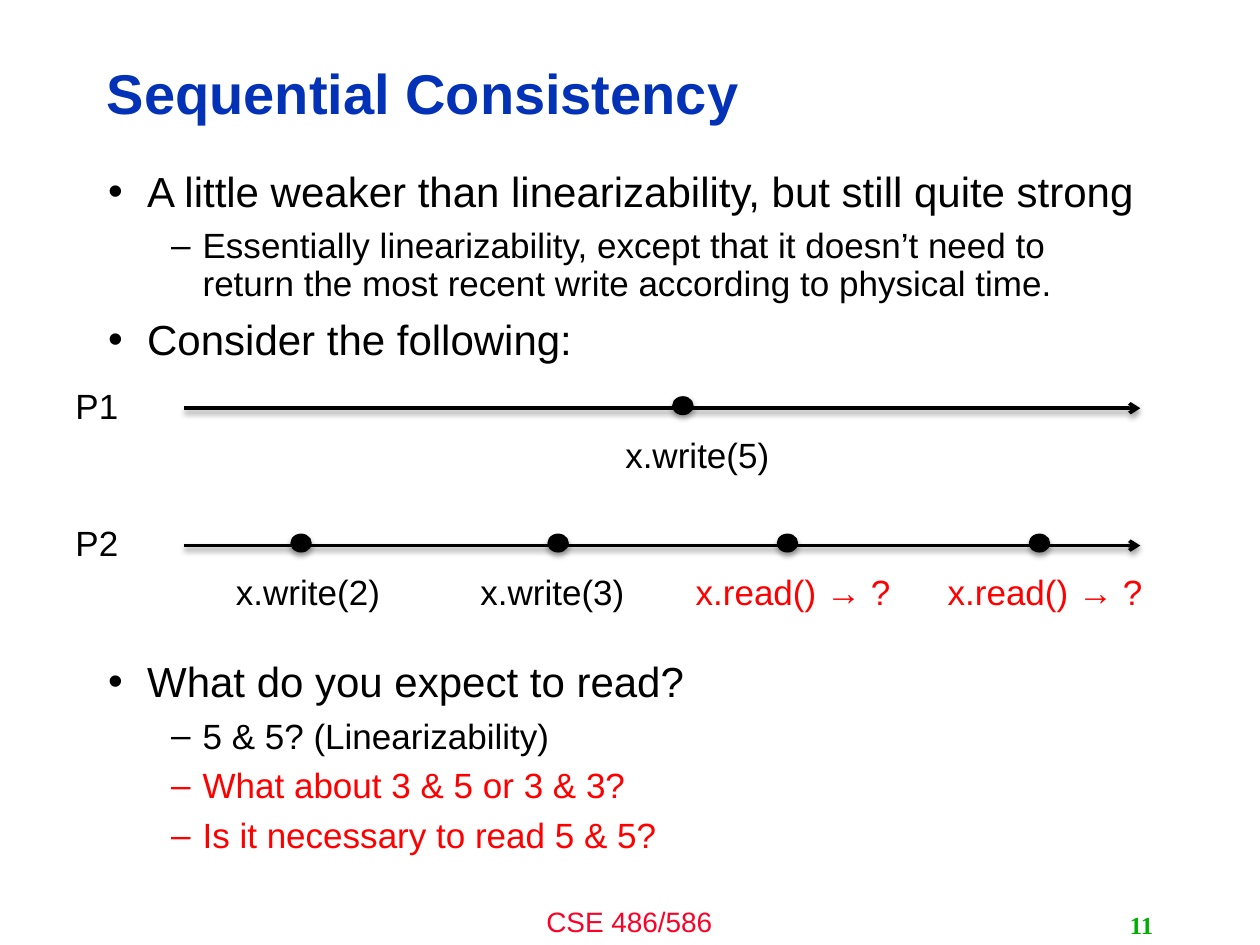
from lxml import etree
from pptx import Presentation
from pptx.dml.color import RGBColor
from pptx.enum.shapes import MSO_CONNECTOR, MSO_SHAPE
from pptx.enum.text import MSO_ANCHOR, PP_ALIGN
from pptx.oxml import parse_xml
from pptx.oxml.ns import nsdecls, qn
from pptx.util import Inches, Pt

LEFT, CENTER, RIGHT = PP_ALIGN.LEFT, PP_ALIGN.CENTER, PP_ALIGN.RIGHT
TOP, MIDDLE = MSO_ANCHOR.TOP, MSO_ANCHOR.MIDDLE
OVAL, STRAIGHT = MSO_SHAPE.OVAL, MSO_CONNECTOR.STRAIGHT

BLACK = RGBColor(0x00, 0x00, 0x00)
RED = RGBColor(0xFF, 0x00, 0x00)
BLUE = RGBColor(0x03, 0x32, 0xB7)
GREEN = RGBColor(0x00, 0xAE, 0x00)
PINK = RGBColor(0xFC, 0x01, 0x28)

CELL = 0.1  # grid of 100 columns by 75 rows
# size, indent and hanging offset in inches, bullet sign
LEVELS = [(24, 0.31, -0.31, "•"), (20, 0.75, -0.25, "–")]


class Deck:
    def __init__(self, cols, rows, font):
        self.font = font
        self.file = Presentation()
        self.file.slide_width = self.unit(cols)
        self.file.slide_height = self.unit(rows)
        self.slide = self.file.slides.add_slide(self.file.slide_layouts[6])

    def unit(self, cells):
        return Inches(cells * CELL)

    def frame(self, area, anchor=TOP):
        box = self.slide.shapes.add_textbox(*map(self.unit, area))
        box.text_frame.word_wrap = True
        box.text_frame.vertical_anchor = anchor
        return box.text_frame

    def run(self, para, text, size, color, bold=False, font=None):
        run = para.add_run()
        run.text = text
        style = run.font
        style.name, style.size, style.bold = font or self.font, Pt(size), bold
        style.color.rgb = color

    def label(self, area, text, size=20, color=BLACK, align=LEFT,
              anchor=TOP, spacing=None, **style):
        para = self.frame(area, anchor).paragraphs[0]
        para.alignment = align
        para.line_spacing = spacing
        self.run(para, text, size, color, **style)

    def bullets(self, area, items):
        frame = self.frame(area)
        for i, (level, text, color) in enumerate(items):
            para = frame.add_paragraph() if i else frame.paragraphs[0]
            size, indent, hang, sign = LEVELS[level]
            para.level = level
            para.line_spacing = 0.9
            para.space_before = Pt(round(size * 0.345, 1))
            props = para._p.get_or_add_pPr()
            props.set("marL", str(Inches(indent)))
            props.set("indent", str(Inches(hang)))
            etree.SubElement(props, qn("a:buFont")).set("typeface", self.font)
            etree.SubElement(props, qn("a:buChar")).set("char", sign)
            self.run(para, text, size, color)

    def shade(self, shape, alpha, dist):
        """Add a soft black shadow straight below the shape."""
        shape._element.spPr.append(parse_xml(
            f'<a:effectLst {nsdecls("a")}><a:outerShdw blurRad="{Pt(3.1)}" '
            f'dist="{Pt(dist)}" dir="5400000" rotWithShape="0">'
            f'<a:srgbClr val="000000"><a:alpha val="{alpha * 1000}"/>'
            '</a:srgbClr></a:outerShdw></a:effectLst>'))

    def arrow(self, start, end, row):
        x1, x2, y = map(self.unit, (start, end, row))
        line = self.slide.shapes.add_connector(STRAIGHT, x1, y, x2, y)
        line.line.color.rgb = BLACK
        line.line.width = Pt(2)
        tail = etree.SubElement(line.line._get_or_add_ln(), qn("a:tailEnd"))
        tail.set("type", "arrow")
        self.shade(line, 38, 1.6)

    def dot(self, col, row):
        area = (col - 0.8, row - 0.9, 1.6, 1.4)
        dot = self.slide.shapes.add_shape(OVAL, *map(self.unit, area))
        dot.fill.solid()
        dot.fill.fore_color.rgb = BLACK
        dot.line.color.rgb = BLACK
        dot.line.width = Pt(0.75)
        self.shade(dot, 35, 1.8)

    def process(self, name, row, events):
        """Draw a timeline; events are (dot column, label column, text, color)."""
        self.label((5, row - 2.4, 9.5, 4.4), name)
        self.arrow(14.6, 90.5, row)
        for col, mid, text, color in events:
            self.dot(col, row)
            self.label((mid - 17.15, row + 1.5, 34.3, 4.4), text,
                       color=color, align=CENTER)


def main():
    deck = Deck(100, 75, "Arial")
    deck.label((33.3, 71.3, 33.3, 3.7), "CSE 486/586", 16, PINK, CENTER)
    deck.label((7.5, 3.6, 79.8, 8.1), "Sequential Consistency", 32, BLUE,
               anchor=MIDDLE, spacing=0.9, bold=True)
    deck.bullets((7.6, 13.1, 84, 16.5), [
        (0, "A little weaker than linearizability, but still quite strong", BLACK),
        (1, "Essentially linearizability, except that it doesn’t need to "
            "return the most recent write according to physical time.", BLACK),
        (0, "Consider the following:", BLACK),
    ])
    deck.process("P1", 32.4, [(54.2, 55.35, "x.write(5)", BLACK)])
    deck.process("P2", 43.3, [
        (23.9, 24.45, "x.write(2)", BLACK),
        (44.3, 43.85, "x.write(3)", BLACK),
        (62.5, 62.95, "x.read() → ?", RED),
        (82.5, 82.95, "x.read() → ?", RED),
    ])
    deck.bullets((7.6, 52, 84, 19), [
        (0, "What do you expect to read?", BLACK),
        (1, "5 & 5? (Linearizability)", BLACK),
        (1, "What about 3 & 5 or 3 & 3?", RED),
        (1, "Is it necessary to read 5 & 5?", RED),
    ])
    deck.label((71.7, 71.8, 20.8, 3.2), "11", 14, GREEN, RIGHT, MIDDLE,
               bold=True, font="Times New Roman")
    deck.file.save("out.pptx")


if __name__ == "__main__":
    main()
